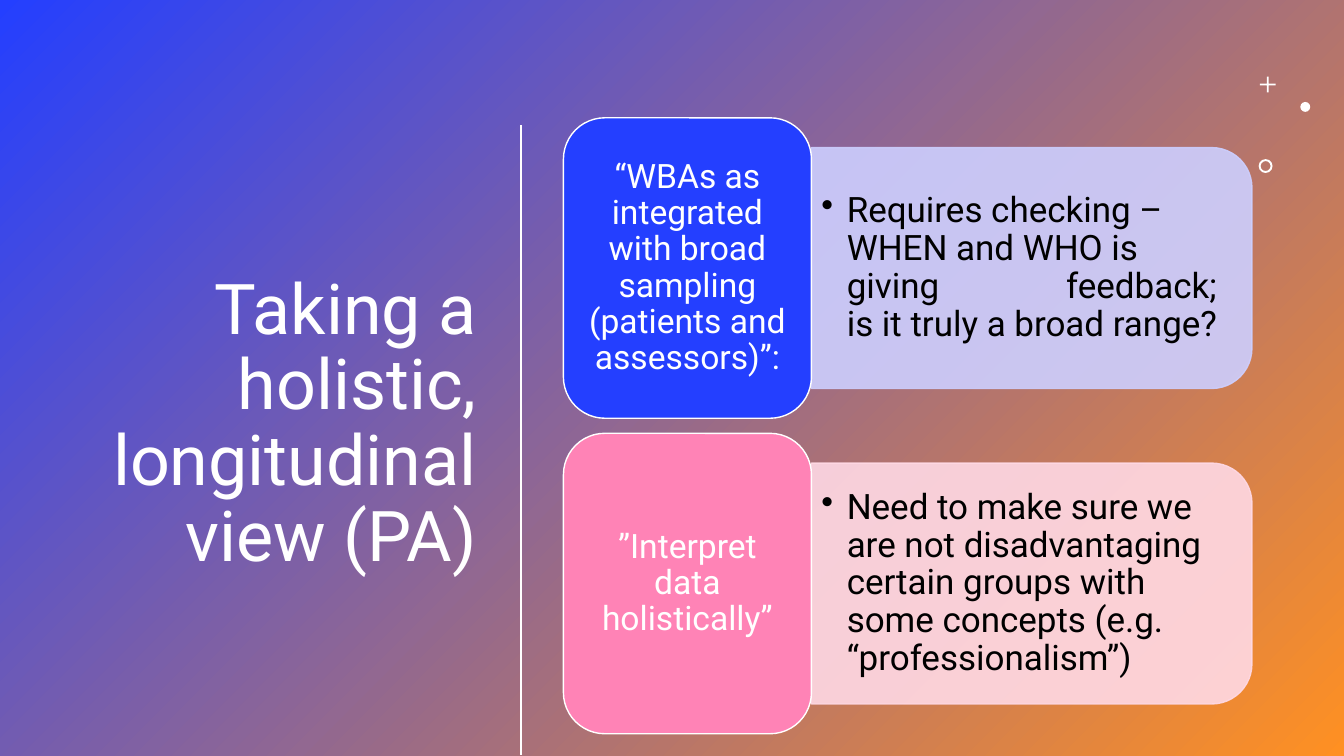
from lxml.etree import SubElement
from pptx import Presentation
from pptx.dml.color import RGBColor
from pptx.enum.shapes import MSO_CONNECTOR, MSO_SHAPE
from pptx.enum.text import MSO_ANCHOR, PP_ALIGN
from pptx.oxml.ns import qn
from pptx.util import Cm, Pt


def paint(color, code):
    color.rgb = RGBColor.from_string(code)


def write(shape, text, size, code, align):
    """Fill a shape with one wrapped, vertically centred paragraph."""
    frame = shape.text_frame
    frame.word_wrap = True
    frame.vertical_anchor = MSO_ANCHOR.MIDDLE
    par = frame.paragraphs[0]
    par.text = text
    par.alignment = align
    par.line_spacing = 0.9
    for run in par.runs:
        run.font.name = "Roboto"
        run.font.size = Pt(size)
        paint(run.font.color, code)
    return par


deck = Presentation()
deck.slide_width, deck.slide_height = Cm(33.87), Cm(19.05)
slide = deck.slides.add_slide(deck.slide_layouts[6])
shapes = slide.shapes

# Gradient backdrop
back = shapes.add_shape(MSO_SHAPE.RECTANGLE, 0, 0, deck.slide_width, deck.slide_height)
back.shadow.inherit = False
back.line.fill.background()
back.fill.gradient()
back.fill.gradient_angle = 315
for stop, code in zip(back.fill.gradient_stops, ("243FFF", "FF9022")):
    paint(stop.color, code)
for stop, place in zip(back.fill.gradient_stops, (0, 1)):
    stop.position = place

# Title and divider
title = shapes.add_textbox(Cm(1.32), Cm(2.95), Cm(10.95), Cm(15.52))
write(title, "Taking a holistic, longitudinal view (PA)", 50, "FFFFFF", PP_ALIGN.RIGHT)

rule = shapes.add_connector(MSO_CONNECTOR.STRAIGHT, Cm(13.13), Cm(3.15), Cm(13.13), Cm(19.03))
rule.line.width = Pt(2)
paint(rule.line.color, "FFFFFF")
SubElement(rule._element.spPr, qn("a:effectLst"))

# Small ornaments: plus, dot and ring
ornaments = [
    (MSO_SHAPE.CROSS, 31.75, 1.93, 0.4, 0.44),
    (MSO_SHAPE.OVAL, 32.77, 2.57, 0.25, None),
    (MSO_SHAPE.DONUT, 31.72, 4.01, 0.35, 0.14),
]
for kind, left, top, size, adjust in ornaments:
    mark = shapes.add_shape(kind, Cm(left), Cm(top), Cm(size), Cm(size))
    mark.shadow.inherit = False
    mark.fill.solid()
    paint(mark.fill.fore_color, "FFFFFF")
    mark.line.fill.background()
    if adjust:
        mark.adjustments[0] = adjust

# Each row: a quote card in front of a pale panel with a comment
rows = [
    ("“WBAs as integrated with broad sampling (patients and assessors)”:", "243FFF",
     "Requires checking – WHEN and WHO is giving\tfeedback; is it truly a broad range?", "CDCFFF"),
    ("”Interpret data holistically”", "FF83B6",
     "Need to make sure we are not disadvantaging certain groups with some concepts "
     "(e.g. “professionalism”)", "FFD9E5"),
]
card_left, card_wide, card_high = 14.2, 6.25, 7.57
panel_left, panel_wide, panel_high = card_left + card_wide, 11.1, 6.07
note_wide, note_high = 10.8, 5.46

for index, (quote, strong, note, pale) in enumerate(rows):
    top = 2.97 + 7.95 * index
    middle = top + card_high / 2

    # Turned a quarter, so width and height change places
    panel = shapes.add_shape(
        MSO_SHAPE.ROUND_2_SAME_RECTANGLE,
        Cm(panel_left + (panel_wide - panel_high) / 2), Cm(middle - panel_wide / 2),
        Cm(panel_high), Cm(panel_wide))
    panel.rotation = 90
    panel.shadow.inherit = False
    panel.fill.solid()
    paint(panel.fill.fore_color, pale)
    panel.line.width = Pt(1)
    paint(panel.line.color, pale)
    for tint in panel._element.spPr.iter(qn("a:srgbClr")):
        SubElement(tint, qn("a:alpha"), val="90000")

    box = shapes.add_textbox(
        Cm(panel_left), Cm(middle - note_high / 2), Cm(note_wide), Cm(note_high))
    par = write(box, note, 25, "000000", PP_ALIGN.LEFT)
    props = par._p.get_or_add_pPr()
    props.set("marL", str(Cm(0.64)))
    props.set("indent", str(-Cm(0.64)))
    SubElement(props, qn("a:buChar"), char="•")
    if "\t" in note:
        tabs = SubElement(props, qn("a:tabLst"))
        SubElement(tabs, qn("a:tab"), pos=str(Cm(6.17)), algn="l")

    card = shapes.add_shape(
        MSO_SHAPE.ROUNDED_RECTANGLE, Cm(card_left), Cm(top), Cm(card_wide), Cm(card_high))
    card.shadow.inherit = False
    card.fill.solid()
    paint(card.fill.fore_color, strong)
    card.line.width = Pt(1)
    paint(card.line.color, "FFFFFF")
    write(card, quote, 24, "FFFFFF", PP_ALIGN.CENTER)

deck.save("out.pptx")
